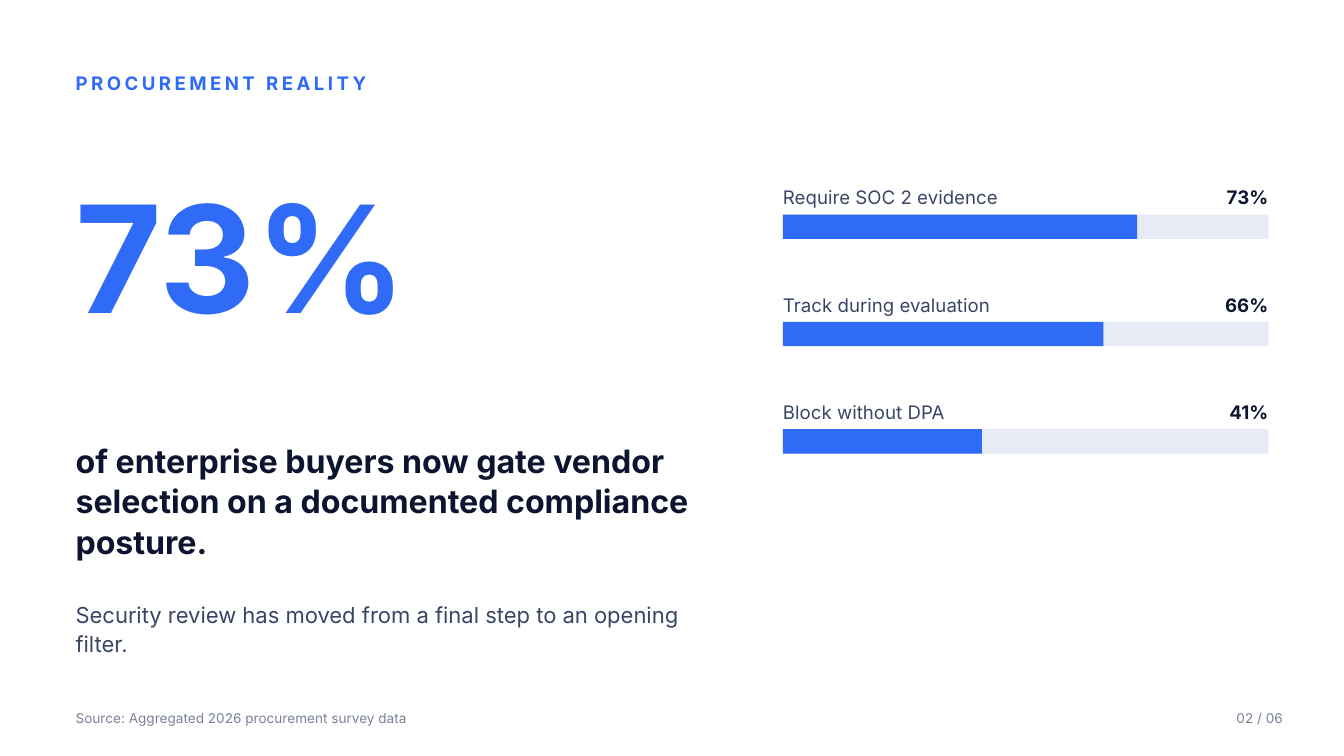
from pptx import Presentation
from pptx import util as u
from pptx.dml import color
from pptx.enum import shapes, text

BLUE, NAVY, SLATE, GREY, TRACK = "2F6BF6", "0C1430", "3A4566", "7A8298", "E7EBF5"
TOP, MIDDLE = text.MSO_ANCHOR.TOP, text.MSO_ANCHOR.MIDDLE
LEFT, RIGHT = text.PP_ALIGN.LEFT, text.PP_ALIGN.RIGHT


def paint(target, shade):
    target.rgb = color.RGBColor.from_string(shade)


def place(shape, left, top, width, height):
    shape.left, shape.top = u.Pt(left), u.Pt(top)
    shape.width, shape.height = u.Pt(width), u.Pt(height)


def write(shape, words, size, shade, bold=False, align=LEFT, anchor=MIDDLE,
          line_spacing=1.0, tracking=0):
    frame = shape.text_frame
    frame.word_wrap = True
    frame.auto_size = text.MSO_AUTO_SIZE.NONE
    frame.vertical_anchor = anchor
    frame.margin_left = frame.margin_top = frame.margin_right = frame.margin_bottom = 0
    para = frame.paragraphs[0]
    para.alignment = align
    para.line_spacing = line_spacing
    span = para.add_run()
    span.text = words
    span.font.name, span.font.size, span.font.bold = "Inter", u.Pt(size), bold
    paint(span.font.color, shade)
    if tracking:
        span.font._element.set("spc", str(tracking * 100))


def add_text(page, left, top, width, height, words, size, shade, **style):
    box = page.shapes.add_textbox(0, 0, 0, 0)
    place(box, left, top, width, height)
    write(box, words, size, shade, **style)


def add_bar(page, left, top, width, height, shade):
    bar = page.shapes.add_shape(shapes.MSO_SHAPE.RECTANGLE, 0, 0, 0, 0)
    place(bar, left, top, width, height)
    bar.shadow.inherit = False
    bar.fill.solid()
    paint(bar.fill.fore_color, shade)
    bar.line.fill.background()


def add_heading(page, left, top, width, height):
    title = page.shapes.title
    place(title, left, top, width, height)
    write(title, "PROCUREMENT REALITY", 11, BLUE, bold=True, tracking=2)


def add_headline_figure(page, left, top, width):
    add_text(page, left, top, width, 151.2, "73%", 88, BLUE, bold=True, anchor=TOP)
    add_text(page, left, top + 162, width, 79.2,
             "of enterprise buyers now gate vendor selection on a documented compliance posture.",
             19, NAVY, bold=True, anchor=TOP, line_spacing=1.05)
    add_text(page, left, top + 244.8, width, 57.6,
             "Security review has moved from a final step to an opening filter.",
             13, SLATE, line_spacing=1.1)


def add_survey_bars(page, left, top, width, pitch, results):
    for index, (label, percent) in enumerate(results):
        row = top + index * pitch
        add_text(page, left, row, width, 17.28, label, 11, SLATE)
        add_bar(page, left, row + 18.72, width, 14.4, TRACK)
        add_bar(page, left, row + 18.72, width * percent / 100, 14.4, BLUE)
        add_text(page, left, row, width, 17.28, f"{percent}%", 11, NAVY, bold=True, align=RIGHT)


def add_footer(page, left, top, width, height):
    number_width = 72
    add_text(page, left, top, width - number_width, height,
             "Source: Aggregated 2026 procurement survey data", 8, GREY)
    add_text(page, left + width - number_width, top, number_width, height,
             "02 / 06", 8, GREY, align=RIGHT)


def main():
    deck = Presentation()
    deck.slide_width, deck.slide_height = u.Pt(793.44), u.Pt(446.4)
    page = deck.slides.add_slide(deck.slide_layouts[5])
    margin = 44.64
    add_heading(page, margin, 39.6, 704.16, 18.72)
    add_headline_figure(page, margin, 97.2, 388.8)
    add_survey_bars(page, 462.24, 108, 286.56, 63.36, [
        ("Require SOC 2 evidence", 73),
        ("Track during evaluation", 66),
        ("Block without DPA", 41),
    ])
    add_footer(page, margin, 416.16, 712.8, 15.84)
    deck.save("out.pptx")


if __name__ == "__main__":
    main()
